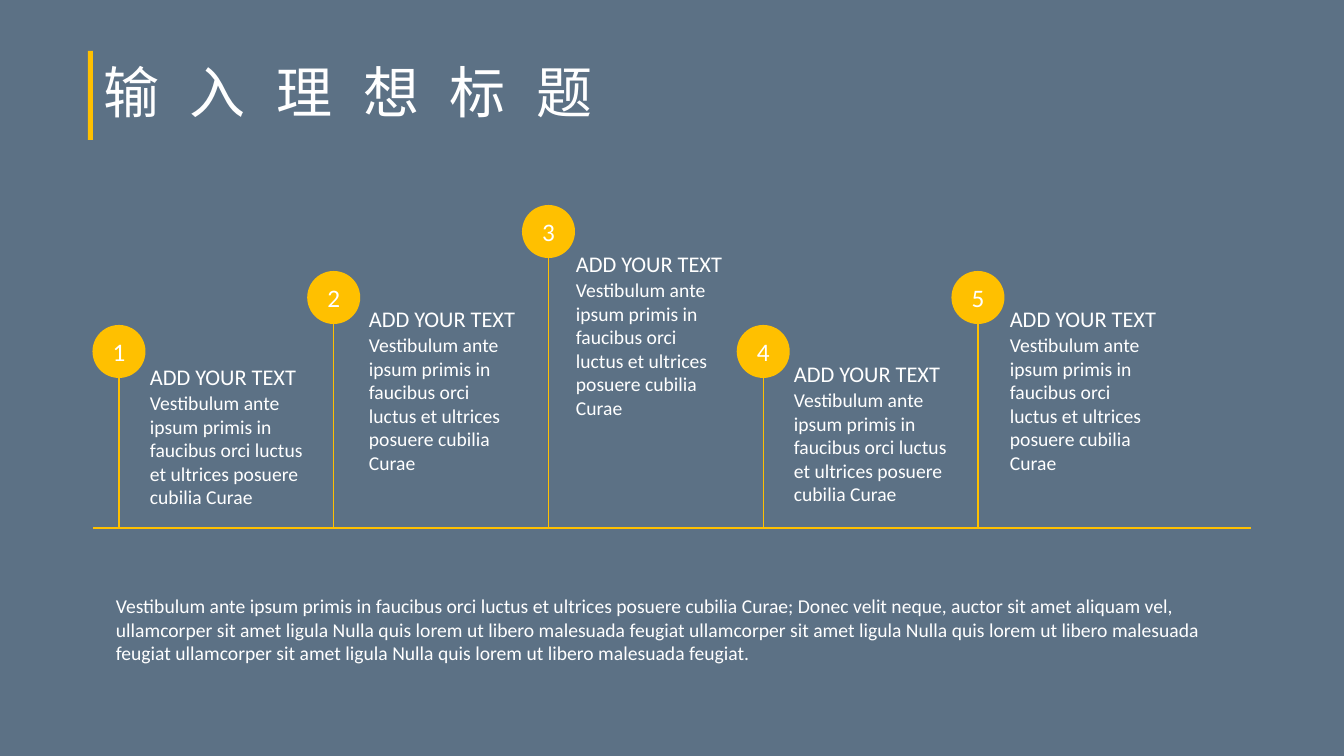
from lxml import etree
from pptx import Presentation
from pptx.dml.color import RGBColor
from pptx.enum.shapes import MSO_CONNECTOR, MSO_SHAPE
from pptx.enum.text import MSO_ANCHOR, MSO_AUTO_SIZE, PP_ALIGN
from pptx.oxml.ns import qn
from pptx.util import Pt

STRAIGHT = MSO_CONNECTOR.STRAIGHT
OVAL, RECTANGLE = MSO_SHAPE.OVAL, MSO_SHAPE.RECTANGLE
MIDDLE, CENTER, LEFT = MSO_ANCHOR.MIDDLE, PP_ALIGN.CENTER, PP_ALIGN.LEFT
FIT_SHAPE, NO_FIT = MSO_AUTO_SIZE.SHAPE_TO_FIT_TEXT, MSO_AUTO_SIZE.NONE

SLATE = RGBColor(0x5C, 0x71, 0x85)
AMBER = RGBColor(0xFF, 0xC0, 0x00)
WHITE = RGBColor(0xFF, 0xFF, 0xFF)
BODY_FONT, TITLE_FONT = "Calibri", "Noto Sans CJK SC"

TITLE = "输入理想标题"
HEADING = "ADD YOUR TEXT"
BODY = "Vestibulum ante ipsum primis in faucibus orci luctus et ultrices posuere cubilia Curae"
SUMMARY = (
    "Vestibulum ante ipsum primis in faucibus orci luctus et ultrices posuere cubilia Curae; "
    "Donec velit neque, auctor sit amet aliquam vel, "
    "ullamcorper sit amet ligula Nulla quis lorem ut libero malesuada feugiat "
    "ullamcorper sit amet ligula Nulla quis lorem ut libero malesuada feugiat "
    "ullamcorper sit amet ligula Nulla quis lorem ut libero malesuada feugiat."
)
# circle top, text left, text top, body width, body height
STEPS = [
    (325, 140, 358, 174, 129),
    (271, 359, 300, 171, 152),
    (205, 566, 245, 171, 152),
    (325, 784, 355, 177, 129),
    (271, 1000, 300, 171, 152),
]
FIRST_CENTER, LAST_CENTER = 119, 978
CIRCLE = 53
AXIS_LEFT, AXIS_RIGHT, AXIS_Y = 93, 1251, 528
HEADING_WIDTH, HEADING_HEIGHT, BODY_OFFSET = 200, 37, 28


def px(length):
    return round(length * 914400 / 100.8)


def add_span(para, text, size, font=BODY_FONT):
    span = para.add_run()
    span.text = text
    span.font.size = Pt(size)
    span.font.name = font
    span.font.color.rgb = WHITE
    return span


def add_solid(page, kind, *bounds):
    solid = page.shapes.add_shape(kind, *map(px, bounds))
    solid.shadow.inherit = False
    solid.fill.solid()
    solid.fill.fore_color.rgb = AMBER
    solid.line.fill.background()
    return solid


def add_text(page, text, size, *bounds):
    box = page.shapes.add_textbox(*map(px, bounds))
    box.text_frame.word_wrap = True
    box.text_frame.auto_size = FIT_SHAPE
    add_span(box.text_frame.paragraphs[0], text, size)


def add_line(group, *ends):
    line = group.shapes.add_connector(STRAIGHT, *map(px, ends))
    line.line.color.rgb = AMBER
    line.line.width = Pt(1)
    etree.SubElement(line._element.spPr, qn("a:effectLst"))


def add_title(page):
    title = page.shapes.title
    title.left, title.top, title.width, title.height = map(px, (93, 22, 1159, 146))
    frame = title.text_frame
    frame.vertical_anchor = MIDDLE
    frame.auto_size = NO_FIT
    para = frame.paragraphs[0]
    para.alignment = LEFT
    para.line_spacing = 0.9
    span = add_span(para, TITLE, 40, TITLE_FONT)
    properties = span.font._element
    properties.set("spc", "2200")
    etree.SubElement(properties, qn("a:ea"), typeface=TITLE_FONT)


def add_circle(page, number, center, top):
    circle = add_solid(page, OVAL, center - CIRCLE / 2, top, CIRCLE, CIRCLE)
    frame = circle.text_frame
    frame.vertical_anchor = MIDDLE
    frame.paragraphs[0].alignment = CENTER
    add_span(frame.paragraphs[0], str(number), 18)


def main():
    deck = Presentation()
    deck.slide_width, deck.slide_height = px(1344), px(756)
    page = deck.slides.add_slide(deck.slide_layouts[5])
    page.background.fill.solid()
    page.background.fill.fore_color.rgb = SLATE

    add_title(page)
    add_solid(page, RECTANGLE, 88, 51, 5, 89)

    pitch = (LAST_CENTER - FIRST_CENTER) / (len(STEPS) - 1)
    lines = page.shapes.add_group_shape()
    add_line(lines, AXIS_LEFT, AXIS_Y, AXIS_RIGHT, AXIS_Y)
    for index, (top, left, text_top, width, height) in enumerate(STEPS):
        center = FIRST_CENTER + index * pitch
        add_line(lines, center, top + CIRCLE, center, AXIS_Y)
        add_circle(page, index + 1, center, top)
        add_text(page, BODY, 14, left, text_top + BODY_OFFSET, width, height)
        add_text(page, HEADING, 16, left, text_top, HEADING_WIDTH, HEADING_HEIGHT)

    add_text(page, SUMMARY, 14, 106, 589, 1145, 82)
    deck.save("out.pptx")


if __name__ == "__main__":
    main()
